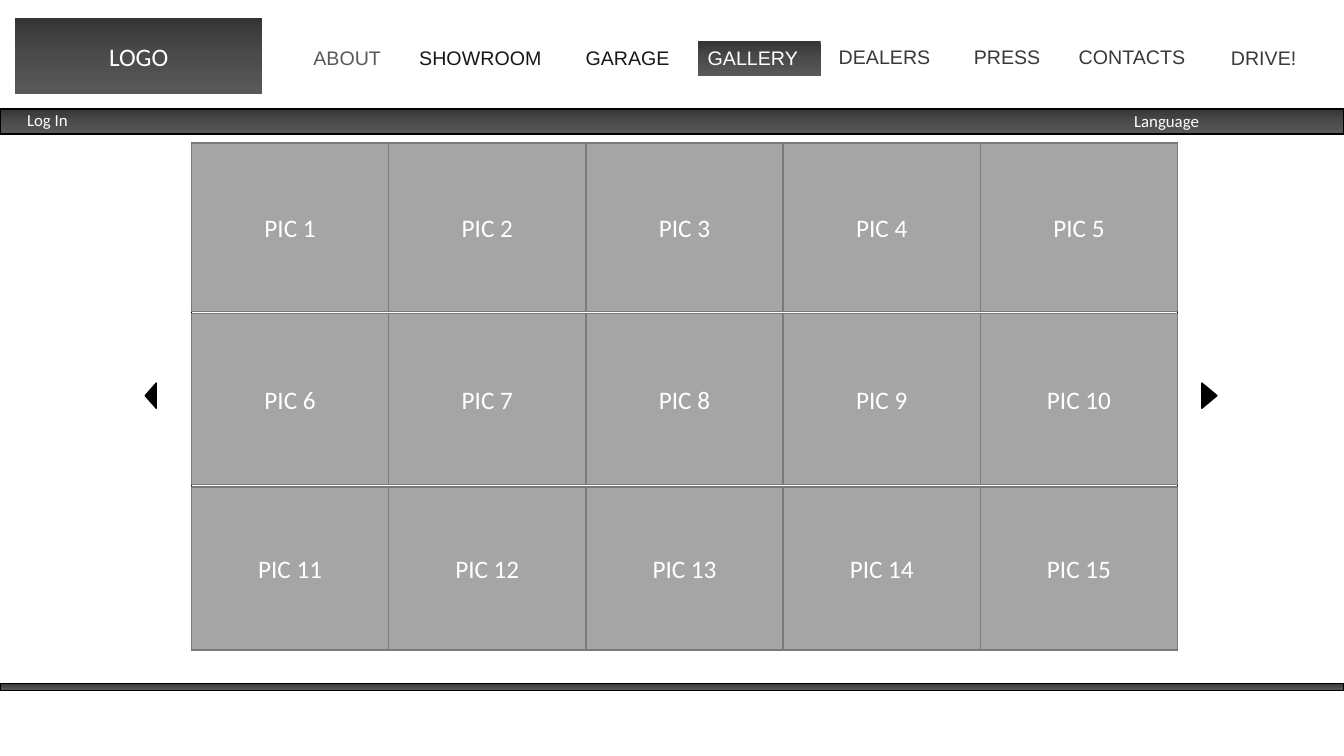
import copy
from dataclasses import dataclass

import pptx
import pptx.dml.color
import pptx.enum.shapes
import pptx.enum.text
import pptx.oxml.ns
import pptx.util

SHAPE = pptx.enum.shapes.MSO_SHAPE
ALIGN = pptx.enum.text.PP_ALIGN
ANCHOR = pptx.enum.text.MSO_ANCHOR
EMU_PER_PX = 9144


@dataclass(frozen=True)
class Theme:
    """Colours, fonts and type sizes of the page."""
    bar: tuple = ((0, "353535"), (0.5, "4B4B4B"), (1, "595959"))
    black: str = "000000"
    white: str = "FFFFFF"
    tile: str = "A5A5A5"
    tile_line: str = "7A7A7A"
    nav_light: str = "595959"
    nav_dark: str = "181717"
    nav_mid: str = "3B3838"
    nav_font: str = "Arial"
    body_font: str = "Calibri"
    label_size: int = 18
    nav_size: int = 14
    small_size: int = 12


THEME = Theme()


def px(*lengths):
    """Turn pixel lengths into EMU."""
    return [pptx.util.Emu(round(n * EMU_PER_PX)) for n in lengths]


def rgb(code):
    """Turn a hex code into a colour."""
    return pptx.dml.color.RGBColor.from_string(code)


def fill_gradient(sp, stops):
    """Fill a shape with a three-stop gradient running downwards."""
    sp.fill.gradient()
    sp.fill.gradient_angle = 270
    gs_list = sp._element.spPr.find(".//" + pptx.oxml.ns.qn("a:gsLst"))
    gs_list.insert(1, copy.deepcopy(gs_list[0]))
    for stop, (position, code) in zip(sp.fill.gradient_stops, stops):
        stop.position = position
        stop.color.rgb = rgb(code)


def add_block(slide, box, fill=None, line=None, kind=SHAPE.RECTANGLE, rotation=0):
    """Add a preset shape with a plain, gradient or empty fill."""
    sp = slide.shapes.add_shape(kind, *px(*box))
    sp.shadow.inherit = False
    sp.rotation = rotation
    if fill is None:
        sp.fill.background()
    elif isinstance(fill, tuple):
        fill_gradient(sp, fill)
    else:
        sp.fill.solid()
        sp.fill.fore_color.rgb = rgb(fill)
    if line:
        sp.line.color.rgb = rgb(line)
        sp.line.width = pptx.util.Pt(1)
    else:
        sp.line.fill.background()
    return sp


def write(sp, text, size=THEME.label_size, font=THEME.body_font, color=THEME.white,
          align=ALIGN.CENTER, anchor=ANCHOR.MIDDLE, grow=False):
    """Write one formatted line of text into a shape."""
    tf = sp.text_frame
    tf.word_wrap = not grow
    if grow:
        tf.auto_size = pptx.enum.text.MSO_AUTO_SIZE.SHAPE_TO_FIT_TEXT
    tf.vertical_anchor = anchor
    p = tf.paragraphs[0]
    p.alignment = align
    r = p.add_run()
    r.text = text
    r.font.size = pptx.util.Pt(size)
    r.font.name = font
    r.font.color.rgb = rgb(color)


def write_line(sp, text, **fmt):
    """Write a left-aligned line that sizes its own box."""
    write(sp, text, align=ALIGN.LEFT, anchor=ANCHOR.TOP, grow=True, **fmt)


def add_header(slide, box):
    """Place the logo block and the navigation items."""
    x, y, _, _ = box
    write(add_block(slide, (x + 15, y + 18, 245, 75), THEME.bar), "LOGO")
    items = [
        ("ABOUT", 301, 41, 97, THEME.nav_light),
        ("SHOWROOM", 406, 41, 157, THEME.nav_dark),
        ("GARAGE", 571, 41, 113, THEME.nav_dark),
        ("GALLERY", 692, 41, 122, THEME.white),
        ("DEALERS", 822, 40, 127, THEME.nav_mid),
        ("PRESS", 956, 40, 97, THEME.nav_mid),
        ("CONTACTS", 1060, 40, 140, THEME.nav_mid),
        ("DRIVE!", 1211, 41, 96, THEME.nav_mid),
    ]
    for text, left, top, width, color in items:
        item_box = (x + left, y + top, width, 34)
        if text == "GALLERY":
            sp = add_block(slide, item_box, THEME.bar)
        else:
            sp = slide.shapes.add_textbox(*px(*item_box))
        write_line(sp, text, size=THEME.nav_size, font=THEME.nav_font, color=color)


def add_user_bar(slide, box):
    """Place the bar with the log-in and language entries."""
    x, y, _, _ = box
    add_block(slide, box, THEME.bar, THEME.black)
    for text, left, top, width in (("Log In", 17, -4, 61), ("Language", 1115, -3, 85)):
        sp = slide.shapes.add_textbox(*px(x + left, y + top, width, 30))
        write_line(sp, text, size=THEME.small_size)


def add_gallery(slide, box, columns=5):
    """Place the frame and its grid of numbered tiles."""
    x, y, w, _ = box
    add_block(slide, box, line=THEME.black)
    for row, (top, height) in enumerate(((0, 167), (169, 170), (341, 162))):
        for col in range(columns):
            tile_box = (x + col * w / columns, y + top, w / columns, height)
            sp = add_block(slide, tile_box, THEME.tile, THEME.tile_line)
            write(sp, f"PIC {row * columns + col + 1}")


def add_arrows(slide, box):
    """Place the previous and next arrows at the ends of the box."""
    x, y, w, _ = box
    for left, top, height, rotation in ((0, 2, 11, 270), (w - 25, 0, 15, 90)):
        add_block(slide, (x + left, y + top, 25, height), THEME.black, THEME.black,
                  SHAPE.ISOSCELES_TRIANGLE, rotation)


def main():
    """Build the gallery page and save it."""
    prs = pptx.Presentation()
    prs.slide_width, prs.slide_height = px(1333, 750)
    slide = prs.slides.add_slide(prs.slide_layouts[6])
    add_header(slide, (0, 0, 1333, 108))
    add_user_bar(slide, (0, 108, 1333, 25))
    add_gallery(slide, (190, 142, 978, 503))
    add_arrows(slide, (137, 385, 1075, 15))
    add_block(slide, (0, 678, 1333, 7), THEME.bar, THEME.black)
    prs.save("out.pptx")


if __name__ == "__main__":
    main()
